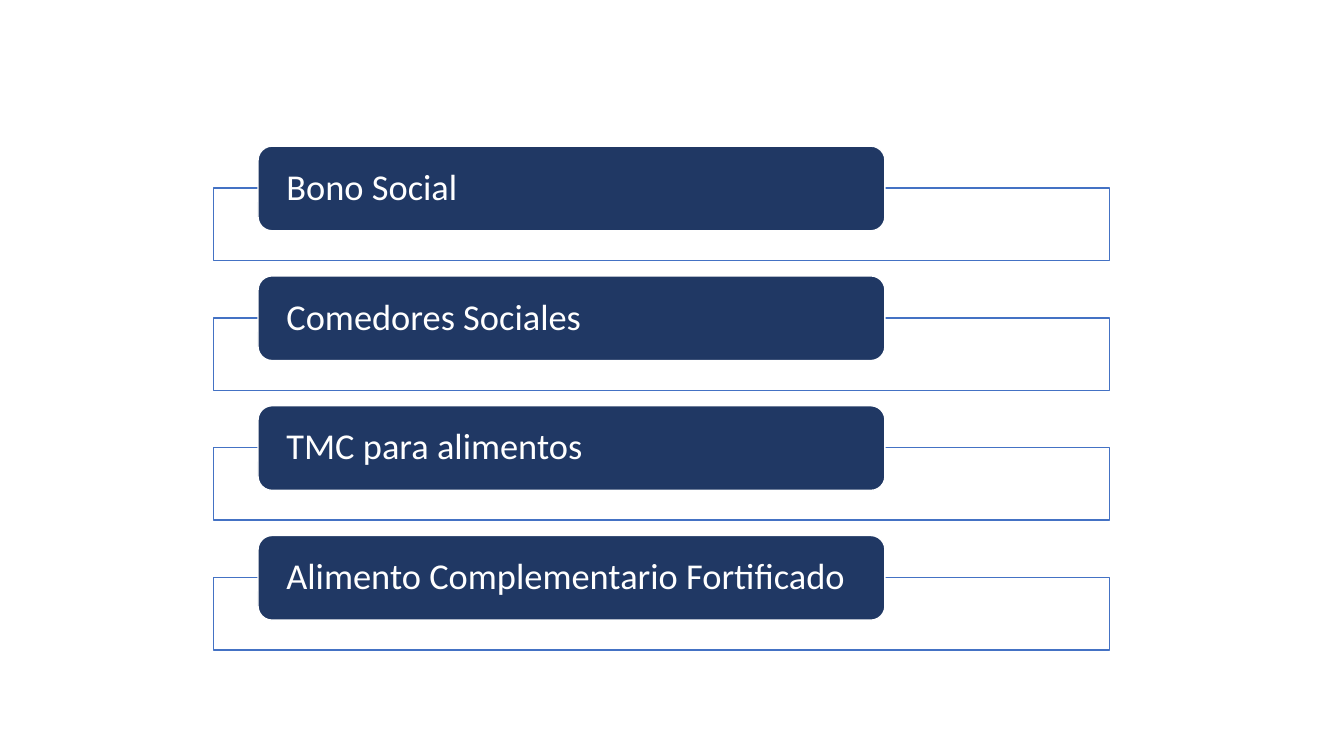
import pptx
import pptx.dml.color
import pptx.enum.shapes
import pptx.enum.text
import pptx.oxml
import pptx.util
import lxml.etree

Pt = pptx.util.Pt
Shape = pptx.enum.shapes.MSO_SHAPE

COLORS = {"white": "FFFFFF", "navy": "203864", "blue": "4472C4"}
PROGRAMS = [
    "Bono Social",
    "Comedores Sociales",
    "TMC para alimentos",
    "Alimento Complementario Fortificado",
]
FIRST_TOP = 104.4
ROW_PITCH = 92.7
FRAME_OFFSET = 30


class ProgramList:
    font = "Calibri"
    size = 26

    def __init__(self, page):
        self.page = page

    def color(self, name):
        return pptx.dml.color.RGBColor.from_string(COLORS[name])

    def box(self, kind, left, top, width, height, fill, line):
        box = self.page.shapes.add_shape(kind, Pt(left), Pt(top), Pt(width), Pt(height))
        box.shadow.inherit = False
        box.fill.solid()
        box.fill.fore_color.rgb = self.color(fill)
        box.line.color.rgb = self.color(line)
        box.line.width = Pt(1)
        return box

    def frame(self, top):
        box = self.box(Shape.RECTANGLE, 152.6, top, 640, 51.8, "white", "blue")
        fill_color = box.fill._xPr.find(".//" + pptx.oxml.ns.qn("a:srgbClr"))
        lxml.etree.SubElement(fill_color, pptx.oxml.ns.qn("a:alpha"), val="90000")

    def label(self, top, text):
        box = self.box(Shape.ROUNDED_RECTANGLE, 184.3, top, 447.8, 60.5, "navy", "white")
        content = box.text_frame
        content.word_wrap = True
        content.vertical_anchor = pptx.enum.text.MSO_ANCHOR.MIDDLE
        content.margin_left = content.margin_right = Pt(17.3)
        content.margin_top = content.margin_bottom = 0
        para = content.paragraphs[0]
        para.text = text
        para.alignment = pptx.enum.text.PP_ALIGN.LEFT
        para.line_spacing = 0.9
        para.font.name = self.font
        para.font.size = Pt(self.size)
        para.font.color.rgb = self.color("white")


def main():
    deck = pptx.Presentation()
    deck.slide_width = Pt(960)
    deck.slide_height = Pt(540)
    programs = ProgramList(deck.slides.add_slide(deck.slide_layouts[6]))
    for row, name in enumerate(PROGRAMS):
        top = FIRST_TOP + row * ROW_PITCH
        programs.frame(top + FRAME_OFFSET)
        programs.label(top, name)
    deck.save("out.pptx")


if __name__ == "__main__":
    main()
